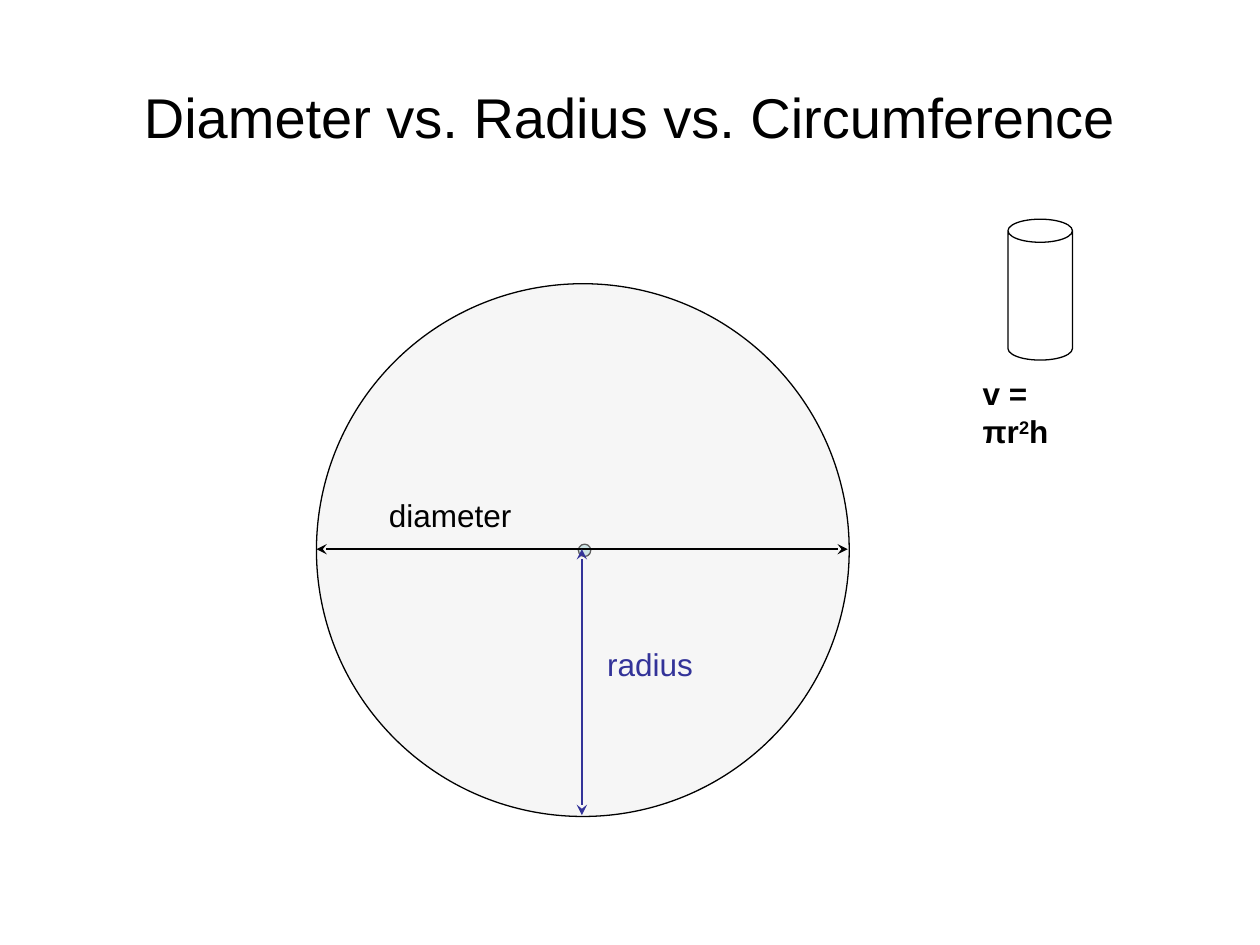
from dataclasses import dataclass

from lxml import etree
from pptx import Presentation
from pptx.dml.color import RGBColor
from pptx.enum.shapes import MSO_CONNECTOR, MSO_SHAPE
from pptx.enum.text import MSO_ANCHOR, PP_ALIGN
from pptx.oxml.ns import qn
from pptx.shapes.autoshape import Shape
from pptx.slide import Slide
from pptx.util import Cm, Pt

OVAL = MSO_SHAPE.OVAL
CAN = MSO_SHAPE.CAN
STRAIGHT = MSO_CONNECTOR.STRAIGHT
TOP = MSO_ANCHOR.TOP
MIDDLE = MSO_ANCHOR.MIDDLE
LEFT = PP_ALIGN.LEFT
CENTER = PP_ALIGN.CENTER

COLORS = {
    "ink": "000000",
    "radius": "333399",
    "disc": "EAEAEA",
    "centre": "BBE0E3",
    "paper": "FFFFFF",
}
LINE_WIDTH = Pt(0.75)


@dataclass(frozen=True)
class Figure:
    kind: int
    left: float
    top: float
    width: float
    height: float
    fill: str
    opacity: int = 100


@dataclass(frozen=True)
class Measure:
    start: tuple[float, float]
    end: tuple[float, float]
    color: str


@dataclass(frozen=True)
class Label:
    spans: tuple[str, ...]
    left: float
    top: float
    width: float
    height: float = 1.02
    size: int = 18
    color: str = "ink"
    bold: bool = False
    wrap: bool = False
    align: int = LEFT
    anchor: int = TOP


CENTRE_DOT = Figure(OVAL, 11.66, 10.97, 0.25, 0.25, "centre")
CIRCLE = Figure(OVAL, 6.38, 5.72, 10.74, 10.74, "disc", 40)
CYLINDER = Figure(CAN, 20.32, 4.42, 1.3, 2.84, "paper")
CYLINDER_RIM = 0.358

MEASURES = (
    Measure((6.38, 11.07), (17.09, 11.07), "ink"),
    Measure((11.73, 11.07), (11.73, 16.43), "radius"),
)

TITLE = Label(("Diameter vs. Radius vs. Circumference",), 1.27, 0.76, 22.86, 3.18,
              size=32, wrap=True, align=CENTER, anchor=MIDDLE)
LABELS = (
    Label(("diameter",), 7.59, 9.88, 2.97),
    Label(("radius",), 11.99, 12.88, 2.24, color="radius"),
)
FORMULA = Label(("v = πr", "2", "h"), 19.56, 7.42, 2.79, bold=True, wrap=True)


def rgb(name: str) -> RGBColor:
    return RGBColor.from_string(COLORS[name])


def draw_figure(page: Slide, figure: Figure) -> Shape:
    shape = page.shapes.add_shape(figure.kind, Cm(figure.left), Cm(figure.top),
                                  Cm(figure.width), Cm(figure.height))
    shape.shadow.inherit = False
    shape.fill.solid()
    shape.fill.fore_color.rgb = rgb(figure.fill)
    if figure.opacity < 100:
        color = shape.element.spPr.find(qn("a:solidFill")).find(qn("a:srgbClr"))
        etree.SubElement(color, qn("a:alpha"), val=str(figure.opacity * 1000))
    shape.line.color.rgb = rgb("ink")
    shape.line.width = LINE_WIDTH
    return shape


def draw_measure(page: Slide, measure: Measure) -> None:
    arrow = page.shapes.add_connector(STRAIGHT, *map(Cm, measure.start + measure.end))
    arrow.line.color.rgb = rgb(measure.color)
    arrow.line.width = LINE_WIDTH
    properties = arrow.element.spPr
    outline = properties.find(qn("a:ln"))
    for end in ("a:headEnd", "a:tailEnd"):
        etree.SubElement(outline, qn(end), type="stealth")
    etree.SubElement(properties, qn("a:effectLst"))


def draw_label(page: Slide, label: Label) -> Shape:
    box = page.shapes.add_textbox(Cm(label.left), Cm(label.top),
                                  Cm(label.width), Cm(label.height))
    frame = box.text_frame
    frame.word_wrap = label.wrap
    frame.vertical_anchor = label.anchor
    para = frame.paragraphs[0]
    para.alignment = label.align
    para.font.name = "Arial"
    para.font.size = Pt(label.size)
    para.font.bold = label.bold
    para.font.color.rgb = rgb(label.color)
    for text in label.spans:
        para.add_run().text = text
    return box


def main() -> None:
    deck = Presentation()
    deck.slide_width, deck.slide_height = Cm(25.4), Cm(19.05)
    page = deck.slides.add_slide(deck.slide_layouts[6])

    draw_figure(page, CENTRE_DOT)
    draw_label(page, TITLE)
    draw_figure(page, CIRCLE)
    for measure in MEASURES:
        draw_measure(page, measure)
    for label in LABELS:
        draw_label(page, label)

    formula = draw_label(page, FORMULA)
    exponent = formula.text_frame.paragraphs[0].runs[1]
    exponent.font._element.set("baseline", "30000")

    cylinder = draw_figure(page, CYLINDER)
    cylinder.adjustments[0] = CYLINDER_RIM

    deck.save("out.pptx")


if __name__ == "__main__":
    main()
